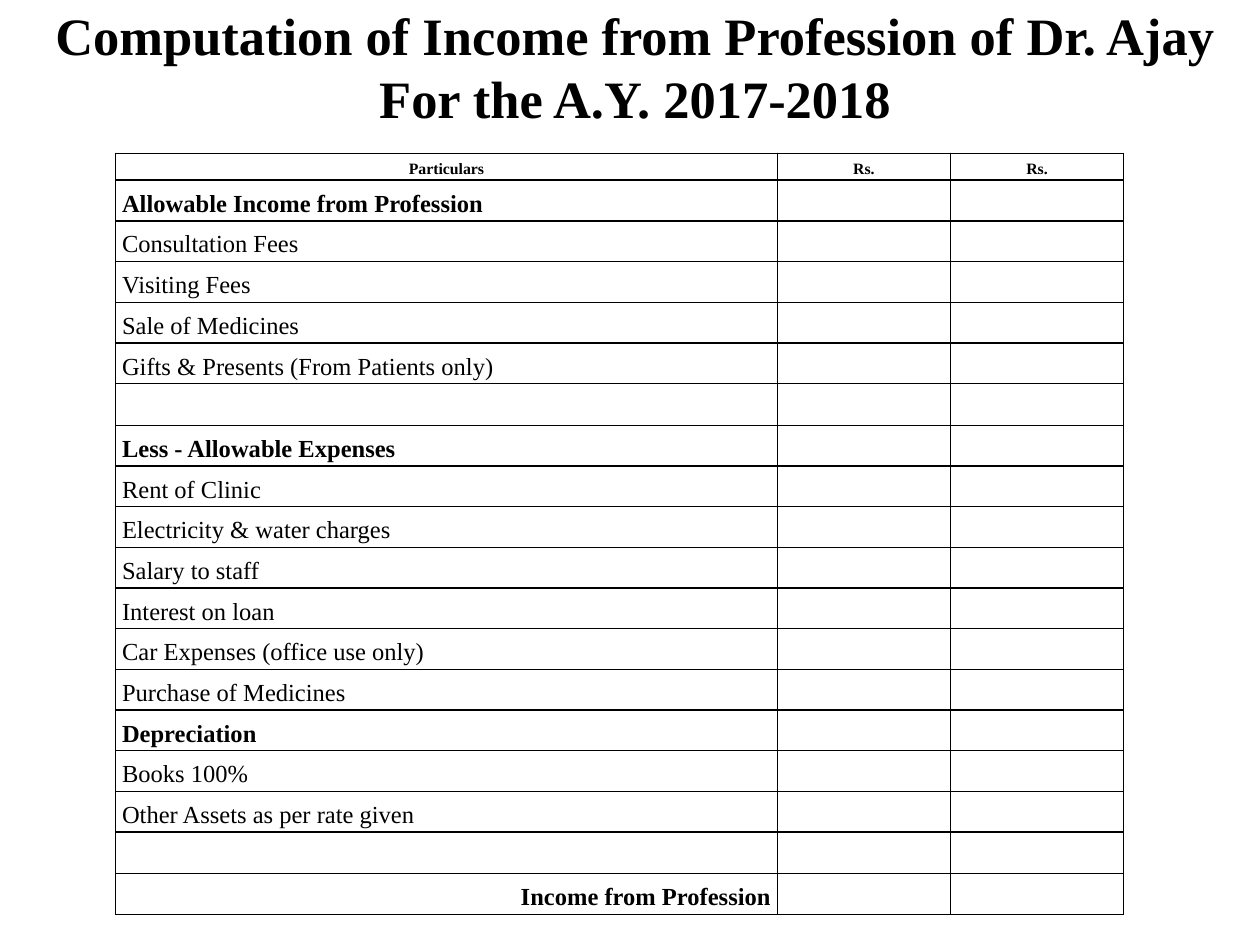
from lxml.etree import SubElement
from pptx import Presentation
from pptx.dml.color import RGBColor
from pptx.enum.text import MSO_ANCHOR as Anchor, PP_ALIGN as Align
from pptx.oxml.ns import qn
from pptx.util import Cm, Pt

BLACK = RGBColor(0, 0, 0)

TITLE = ["Computation of Income from Profession of Dr. Ajay", "For the A.Y. 2017-2018"]
HEADINGS = ["Particulars", "Rs.", "Rs."]
SECTIONS = {"Allowable Income from Profession", "Less - Allowable Expenses", "Depreciation"}
TOTAL = "Income from Profession"
PARTICULARS = [
    "Allowable Income from Profession",
    "Consultation Fees",
    "Visiting Fees",
    "Sale of Medicines",
    "Gifts & Presents (From Patients only)",
    "",
    "Less - Allowable Expenses",
    "Rent of Clinic",
    "Electricity & water charges",
    "Salary to staff",
    "Interest on loan",
    "Car Expenses (office use only)",
    "Purchase of Medicines",
    "Depreciation",
    "Books 100%",
    "Other Assets as per rate given",
    "",
    TOTAL,
]


class StatementSlide:
    font_name = "Times New Roman"
    color = BLACK

    def __init__(self, slide):
        self.slide = slide

    def add_run(self, paragraph, text, size, bold):
        run = paragraph.add_run()
        run.text = text
        run.font.name = self.font_name
        run.font.size = Pt(size)
        run.font.bold = bold
        run.font.color.rgb = self.color

    def add_title(self, lines, left, top, width, height):
        frame = self.slide.shapes.add_textbox(left, top, width, height).text_frame
        frame.word_wrap = True
        frame.vertical_anchor = Anchor.MIDDLE
        frame.margin_left = frame.margin_right = 0
        frame.margin_top, frame.margin_bottom = Cm(0.13), Cm(1.38)
        paragraph = frame.paragraphs[0]
        paragraph.alignment = Align.CENTER
        for number, line in enumerate(lines):
            if number:
                paragraph.add_line_break()
            self.add_run(paragraph, line, 30, True)

    def add_table(self, left, top, widths, heights):
        table = self.slide.shapes.add_table(
            len(heights), len(widths), left, top, sum(widths), sum(heights)).table
        table.first_row = table.horz_banding = False
        for column, width in zip(table.columns, widths):
            column.width = width
        for row, height in zip(table.rows, heights):
            row.height = height
        for cell in table.iter_cells():
            cell.margin_left = cell.margin_right = Cm(0.13)
            cell.margin_top = cell.margin_bottom = 0
            self.add_borders(cell)
            cell.fill.background()
        return table

    def add_borders(self, cell):
        properties = cell._tc.get_or_add_tcPr()
        for side in ("a:lnL", "a:lnR", "a:lnT", "a:lnB"):
            border = SubElement(properties, qn(side), w=str(Pt(1)))
            fill = SubElement(border, qn("a:solidFill"))
            SubElement(fill, qn("a:srgbClr"), val=str(self.color))

    def add_entry(self, cell, text, size, bold, spacing, align=Align.LEFT):
        paragraph = cell.text_frame.paragraphs[0]
        paragraph.alignment = align
        paragraph.line_spacing = spacing
        self.add_run(paragraph, text, size, bold)


def main():
    deck = Presentation()
    deck.slide_width, deck.slide_height = Cm(25.4), Cm(19.05)
    statement = StatementSlide(deck.slides.add_slide(deck.slide_layouts[6]))

    # Title
    statement.add_title(TITLE, Cm(0.84), Cm(0.76), Cm(23.93), Cm(2.41))

    # Statement grid, with slightly taller spacer rows
    widths = [Cm(13.34), Cm(3.49), Cm(3.49)]
    heights = [Cm(0.54)] + [Cm(0.82 if text else 0.84) for text in PARTICULARS]
    table = statement.add_table(Cm(2.33), Cm(3.09), widths, heights)

    # Headings
    for column, heading in enumerate(HEADINGS):
        statement.add_entry(table.cell(0, column), heading, 9, True, 1.42, Align.CENTER)

    # Income, expenses and total
    for row, text in enumerate(PARTICULARS, start=1):
        if text:
            bold = text in SECTIONS or text == TOTAL
            align = Align.RIGHT if text == TOTAL else Align.LEFT
            statement.add_entry(table.cell(row, 0), text, 14, bold, 1.38, align)

    deck.save("out.pptx")


if __name__ == "__main__":
    main()
